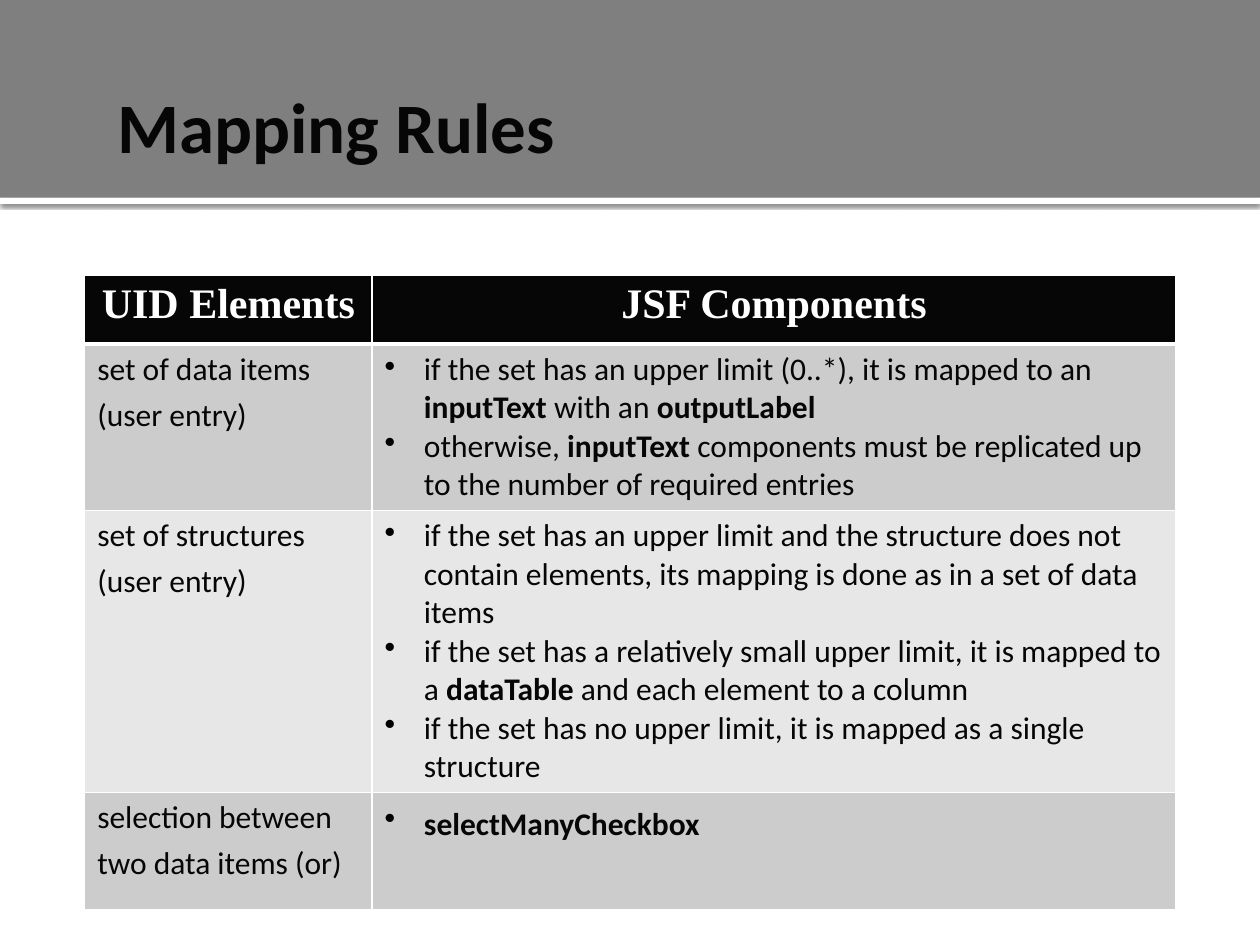
"""Build the Mapping Rules slide with its table of UID elements and JSF components."""
import dataclasses

import lxml.etree
import pptx
import pptx.dml.color
import pptx.enum.shapes
import pptx.enum.text
import pptx.oxml
import pptx.oxml.ns
import pptx.util

Pt = pptx.util.Pt
INK, WHITE, GREY = "060606", "FFFFFF", "7F7F7F"
BODY_FONT, HEAD_FONT = "Calibri", "Times New Roman"
NAMESPACE = pptx.oxml.ns.nsdecls("a")
COLUMN_WIDTHS = (164.2, 459.4)
HEADER_HEIGHT = 39.6
HEADINGS = ("UID Elements", "JSF Components")


@dataclasses.dataclass(frozen=True)
class Span:
    text: str
    bold: bool = False
    size: float = 18
    font: str = BODY_FONT
    color: str = INK


@dataclasses.dataclass(frozen=True)
class Rule:
    element: str
    mappings: list[list[Span]]
    height: float
    fill: str


GAP = Span(" ", size=24, font=HEAD_FONT)
RULES = [
    Rule("set of data items (user entry)", [
        [Span("if the set has an upper limit (0..*), it is mapped to an "),
         Span("inputText", True), Span(" with an "), Span("outputLabel", True)],
        [Span("otherwise, "), Span("inputText ", True),
         Span("components must be replicated up to the number of required entries")],
    ], 94.5, "CCCCCC"),
    Rule("set of structures (user entry)", [
        [Span("if the set has an upper limit and the structure does not contain "
              "elements, its mapping is done as in a set of data items")],
        [Span("if the set has a relatively small upper limit, it is mapped to a "),
         Span("dataTable", True), Span(" and each element to a column")],
        [Span("if the set has no upper limit, it is mapped as a single structure")],
    ], 161, "E7E7E7"),
    Rule("selection between two data items (or)",
         [[Span("selectManyCheckbox", True), GAP]], 67, "CCCCCC"),
]


def rgb(color: str) -> pptx.dml.color.RGBColor:
    return pptx.dml.color.RGBColor.from_string(color)


def format_run(run, span: Span) -> None:
    run.font.name = span.font
    run.font.size = Pt(span.size)
    run.font.bold = span.bold
    run.font.color.rgb = rgb(span.color)


def write_spans(para, spans: list[Span]) -> None:
    for span in spans:
        run = para.add_run()
        run.text = span.text
        format_run(run, span)


def add_bullet(para) -> None:
    properties = para._p.get_or_add_pPr()
    properties.set("marL", str(Pt(22.5)))
    properties.set("indent", str(-Pt(22.5)))
    for xml in (f'<a:buClr {NAMESPACE}><a:srgbClr val="000000"/></a:buClr>',
                f'<a:buChar {NAMESPACE} char="•"/>'):
        properties.append(pptx.oxml.parse_xml(xml))


def style_cell(cell, fill: str, top: float = 1, bottom: float = 1) -> None:
    properties = cell._tc.get_or_add_tcPr()
    for side, width in (("L", 1), ("R", 1), ("T", top), ("B", bottom)):
        properties.append(pptx.oxml.parse_xml(
            f'<a:ln{side} {NAMESPACE} w="{Pt(width)}"><a:solidFill>'
            f'<a:srgbClr val="{WHITE}"/></a:solidFill></a:ln{side}>'))
    cell.fill.solid()
    cell.fill.fore_color.rgb = rgb(fill)


def add_band(slide, top: float, height: float, fill: str):
    band = slide.shapes.add_shape(pptx.enum.shapes.MSO_SHAPE.RECTANGLE,
                                  Pt(0), Pt(top), Pt(720), Pt(height))
    band.shadow.inherit = False
    band.fill.solid()
    band.fill.fore_color.rgb = rgb(fill)
    band.line.fill.background()
    return band


def add_shadow(band) -> None:
    effects = band._element.spPr.find(pptx.oxml.ns.qn("a:effectLst"))
    effects.append(pptx.oxml.parse_xml(
        f'<a:outerShdw {NAMESPACE} blurRad="{Pt(2.5)}" dist="{Pt(0.8)}" dir="5400000">'
        '<a:srgbClr val="000000"><a:alpha val="60000"/></a:srgbClr></a:outerShdw>'))


def write_title(slide, band) -> None:
    title = slide.shapes.title
    band.element.addnext(title.element)
    title.left, title.top, title.width, title.height = map(Pt, (59.8, 41.8, 635.8, 59.8))
    frame = title.text_frame
    frame.text = "Mapping Rules"
    frame.vertical_anchor = pptx.enum.text.MSO_ANCHOR.MIDDLE
    frame.margin_left = Pt(7.2)
    frame.margin_right = frame.margin_top = frame.margin_bottom = Pt(3.6)
    para = frame.paragraphs[0]
    para.alignment = pptx.enum.text.PP_ALIGN.LEFT
    format_run(para.runs[0], Span("", True, 40.5))


def add_rules_table(slide) -> None:
    heights = [HEADER_HEIGHT, *(rule.height for rule in RULES)]
    table = slide.shapes.add_table(
        len(heights), len(COLUMN_WIDTHS), Pt(48.4), Pt(157),
        Pt(sum(COLUMN_WIDTHS)), Pt(sum(heights))).table
    for column, width in zip(table.columns, COLUMN_WIDTHS):
        column.width = Pt(width)
    for row, height in zip(table.rows, heights):
        row.height = Pt(height)
    for cell, heading in zip(table.rows[0].cells, HEADINGS):
        style_cell(cell, INK, bottom=3)
        para = cell.text_frame.paragraphs[0]
        para.alignment = pptx.enum.text.PP_ALIGN.CENTER
        write_spans(para, [Span(heading, True, 24, HEAD_FONT, WHITE)])
    for index, rule in enumerate(RULES, start=1):
        element, mapping = table.rows[index].cells
        for cell in (element, mapping):
            style_cell(cell, rule.fill, top=3 if index == 1 else 1)
        write_spans(element.text_frame.paragraphs[0], [Span(rule.element), GAP])
        frame = mapping.text_frame
        for position, spans in enumerate(rule.mappings):
            para = frame.add_paragraph() if position else frame.paragraphs[0]
            add_bullet(para)
            write_spans(para, spans)


def main() -> None:
    deck = pptx.Presentation()
    deck.slide_width, deck.slide_height = Pt(720), Pt(540)
    slide = deck.slides.add_slide(deck.slide_layouts[5])
    add_shadow(add_band(slide, 113, 3.6, WHITE))
    header = add_band(slide, 0, 113, GREY)
    write_title(slide, header)
    add_rules_table(slide)
    deck.save("out.pptx")


if __name__ == "__main__":
    main()
